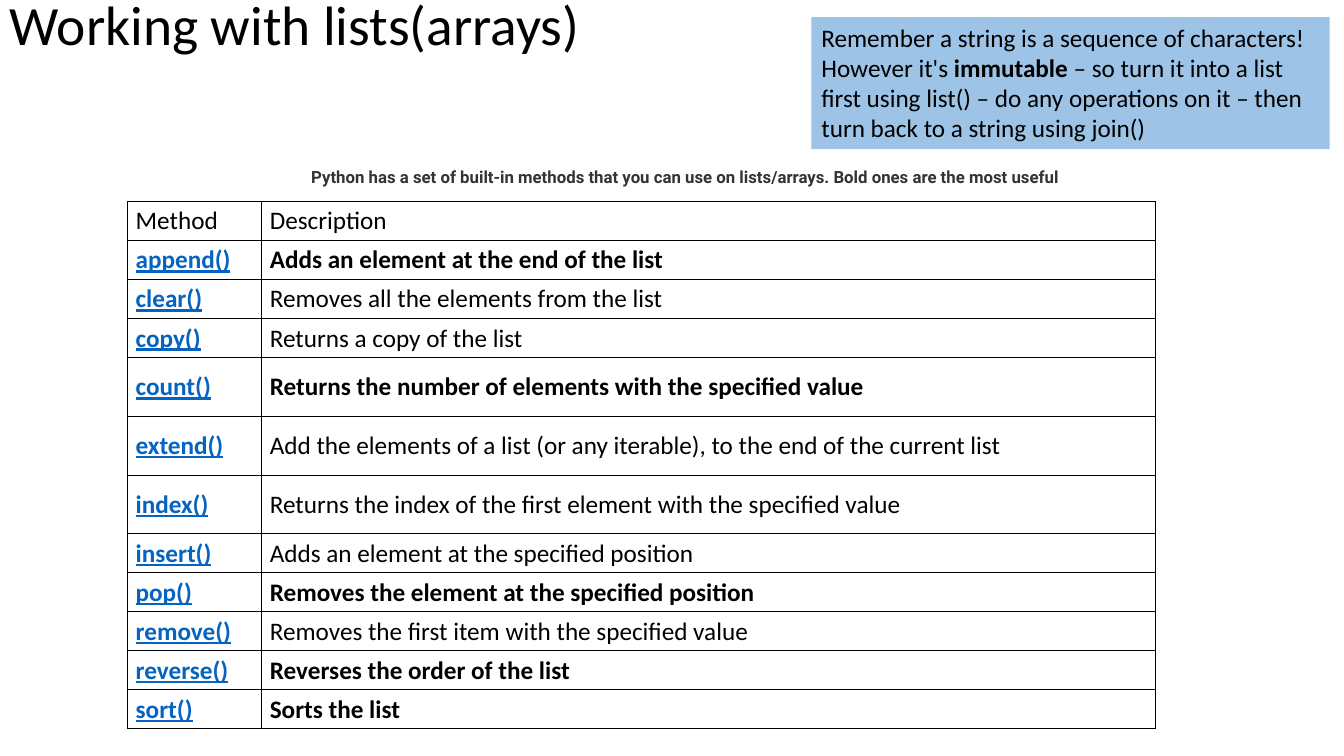
import pptx
import pptx.dml.color
import pptx.enum.shapes
import pptx.enum.text
import pptx.oxml
import pptx.oxml.ns
import pptx.util
from pptx.util import Cm

BLACK = pptx.dml.color.RGBColor(0x00, 0x00, 0x00)
WHITE = pptx.dml.color.RGBColor(0xFF, 0xFF, 0xFF)
GREY = pptx.dml.color.RGBColor(0x33, 0x33, 0x33)
LINK_BLUE = pptx.dml.color.RGBColor(0x05, 0x63, 0xC1)
PALE_BLUE = pptx.dml.color.RGBColor(0x9D, 0xC3, 0xE6)

ALIGN = pptx.enum.text.PP_ALIGN
MIDDLE = pptx.enum.text.MSO_ANCHOR.MIDDLE
TOP = pptx.enum.text.MSO_ANCHOR.TOP

BODY = {"name": "Calibri", "size": pptx.util.Pt(18), "bold": False}
TITLE = BODY | {"size": pptx.util.Pt(39.6)}
CAPTION = {"name": "Roboto", "size": pptx.util.Pt(12), "bold": True}
METHOD = BODY | {"bold": True, "underline": True}

ROW_HEIGHT = Cm(0.84)
TALL_ROW_HEIGHT = Cm(1.48)
TALL_METHODS = {"count()", "extend()", "index()"}
USEFUL_METHODS = {"append()", "count()", "pop()", "reverse()", "sort()"}
METHODS = [
    ("append()", "Adds an element at the end of the list"),
    ("clear()", "Removes all the elements from the list"),
    ("copy()", "Returns a copy of the list"),
    ("count()", "Returns the number of elements with the specified value"),
    ("extend()", "Add the elements of a list (or any iterable), to the end of the current list"),
    ("index()", "Returns the index of the first element with the specified value"),
    ("insert()", "Adds an element at the specified position"),
    ("pop()", "Removes the element at the specified position"),
    ("remove()", "Removes the first item with the specified value"),
    ("reverse()", "Reverses the order of the list"),
    ("sort()", "Sorts the list"),
]


def set_attributes(target, values):
    for name, value in values.items():
        setattr(target, name, value)


def add_span(para, text, font, color=BLACK):
    span = para.add_run()
    span.text = text
    set_attributes(span.font, font)
    span.font.color.rgb = color


def add_title(page, text):
    box = page.shapes.add_textbox(Cm(0), Cm(-0.03), Cm(29.21), Cm(1.45))
    set_attributes(box.text_frame, {"word_wrap": True, "vertical_anchor": MIDDLE})
    para = box.text_frame.paragraphs[0]
    para.line_spacing = 0.9
    add_span(para, text, TITLE)


def add_panel(page, place, fill, paragraphs, color=BLACK, align=ALIGN.LEFT, **frame):
    """Add a filled rectangle; each paragraph is a list of (text, font) spans."""
    box = page.shapes.add_shape(pptx.enum.shapes.MSO_SHAPE.RECTANGLE, *place)
    box.shadow.inherit = False
    box.fill.solid()
    box.fill.fore_color.rgb = fill
    box.line.fill.background()
    set_attributes(box.text_frame, frame)
    for index, spans in enumerate(paragraphs):
        para = box.text_frame.add_paragraph() if index else box.text_frame.paragraphs[0]
        para.alignment = align
        for text, font in spans:
            add_span(para, text, font, color)


def add_borders(cell):
    properties = cell._tc.get_or_add_tcPr()
    for position, side in enumerate(("lnL", "lnR", "lnT", "lnB")):
        border = pptx.oxml.parse_xml(
            f'<a:{side} {pptx.oxml.ns.nsdecls("a")} w="{pptx.util.Pt(1)}">'
            f'<a:solidFill><a:srgbClr val="{BLACK}"/></a:solidFill></a:{side}>'
        )
        properties.insert(position, border)


def fill_cell(cell, text, font, color=BLACK):
    set_attributes(cell, {
        "vertical_anchor": MIDDLE,
        "margin_left": Cm(0.21), "margin_right": Cm(0.21),
        "margin_top": Cm(0.11), "margin_bottom": Cm(0.11),
    })
    cell.fill.solid()
    cell.fill.fore_color.rgb = WHITE
    add_borders(cell)
    add_span(cell.text_frame.paragraphs[0], text, font, color)


def add_method_table(page):
    row_count = len(METHODS) + 1
    frame = page.shapes.add_table(row_count, 2, Cm(3.21), Cm(5.08), Cm(25.91), Cm(13.2))
    table = frame.table
    set_attributes(table, {"first_row": False, "horz_banding": False})
    for column, width in zip(table.columns, (Cm(3.38), Cm(22.53))):
        column.width = width
    table.rows[0].height = ROW_HEIGHT
    for index, heading in enumerate(("Method", "Description")):
        fill_cell(table.cell(0, index), heading, BODY)
    for index, (method, description) in enumerate(METHODS, start=1):
        table.rows[index].height = TALL_ROW_HEIGHT if method in TALL_METHODS else ROW_HEIGHT
        fill_cell(table.cell(index, 0), method, METHOD, LINK_BLUE)
        fill_cell(table.cell(index, 1), description, BODY | {"bold": method in USEFUL_METHODS})


def main():
    deck = pptx.Presentation()
    set_attributes(deck, {"slide_width": Cm(33.87), "slide_height": Cm(19.05)})
    page = deck.slides.add_slide(deck.slide_layouts[6])
    add_title(page, "Working with lists(arrays)")
    add_method_table(page)
    caption = (
        "Python has a set of built-in methods that you can use on lists/arrays. "
        "Bold ones are the most useful"
    )
    add_panel(
        page, (Cm(7.57), Cm(4.06), Cm(19.41), Cm(0.77)), WHITE, [[(caption, CAPTION)]],
        color=GREY, align=ALIGN.CENTER, word_wrap=False, vertical_anchor=MIDDLE,
    )
    reminder = [
        [("Remember a string is a sequence of characters!", BODY)],
        [
            ("However it's ", BODY),
            ("immutable ", BODY | {"bold": True}),
            ("– so turn it into a list first using list() – do any operations on it "
             "– then turn back to a string using join()", BODY),
        ],
    ]
    add_panel(
        page, (Cm(20.45), Cm(0.43), Cm(13.06), Cm(3.33)), PALE_BLUE, reminder,
        word_wrap=True, vertical_anchor=TOP,
    )
    deck.save("out.pptx")


if __name__ == "__main__":
    main()
